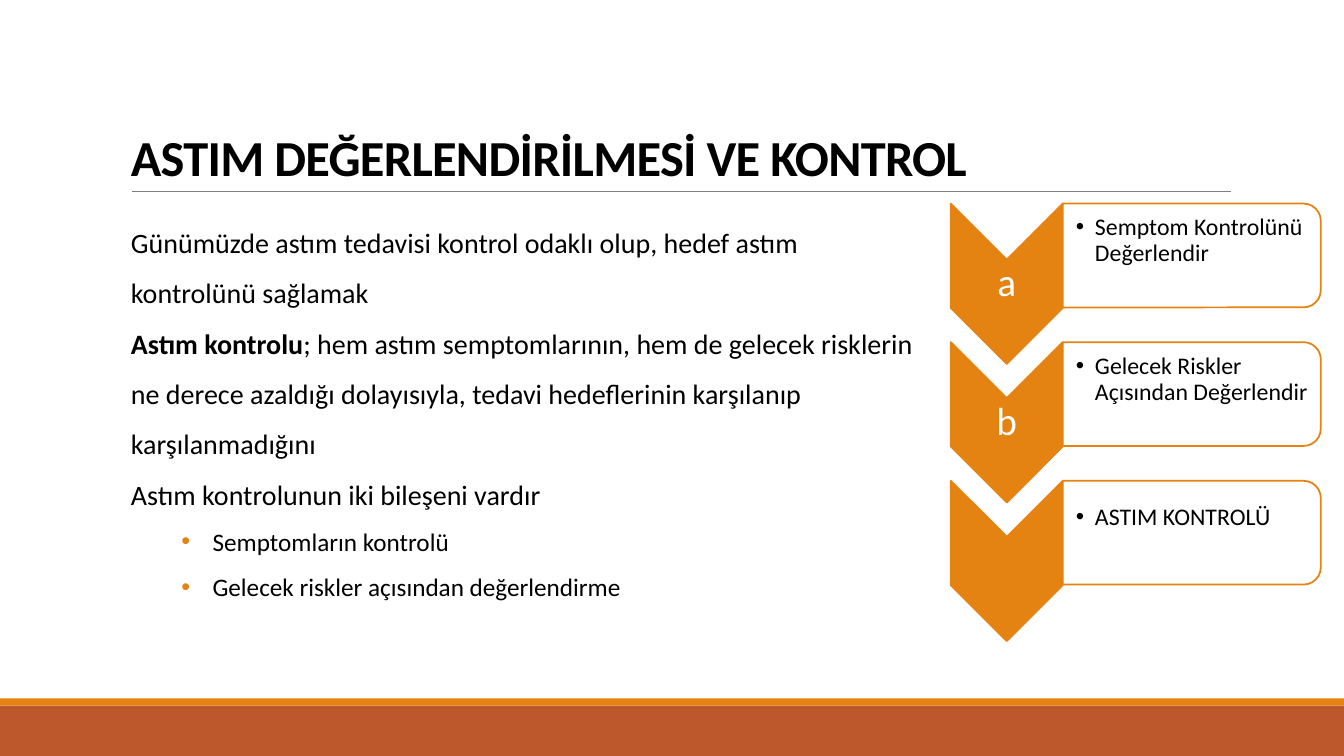
import pptx
import pptx.dml.color
import pptx.enum.shapes
import pptx.enum.text
import pptx.oxml
import pptx.oxml.ns
import pptx.util
from lxml import etree

TITLE = "ASTIM DEĞERLENDİRİLMESİ VE KONTROL"
# Each paragraph is a level and its (text, bold) parts
BODY = [
    (0, [("Günümüzde astım tedavisi kontrol odaklı olup, hedef astım kontrolünü sağlamak", False)]),
    (0, [("Astım kontrolu", True),
         ("; hem astım semptomlarının, hem de gelecek risklerin ne derece azaldığı dolayısıyla, "
          "tedavi hedeflerinin karşılanıp karşılanmadığını", False)]),
    (0, [("Astım kontrolunun iki bileşeni vardır", False)]),
    (1, [("Semptomların kontrolü", False)]),
    (1, [("Gelecek riskler açısından değerlendirme", False)]),
]
STEPS = [
    ("a", "Semptom Kontrolünü Değerlendir"),
    ("b", "Gelecek Riskler Açısından Değerlendir"),
    ("", "ASTIM KONTROLÜ"),
]
COLORS = {"orange": "E48312", "rust": "BD582C", "rule": "808080",
          "text": "000000", "paper": "FFFFFF"}
FONT = "Calibri"
BODY_SIZES = (20, 18)

WIDTH, HEIGHT = 13.33, 7.5
MARGIN = 1.2
FOOTER_TOP, STRIPE = 7.0, 0.07
STEP_LEFT, STEP_TOP, STEP_PITCH = 9.43, 2.02, 1.375
CHEVRON_W, CHEVRON_H = 1.11, 1.59
CARD_W, CARD_H = 2.56, 1.03

inch = pptx.util.Inches
SHAPE = pptx.enum.shapes.MSO_SHAPE
ANCHOR = pptx.enum.text.MSO_ANCHOR
ALIGN = pptx.enum.text.PP_ALIGN
qn = pptx.oxml.ns.qn

deck = pptx.Presentation()
deck.slide_width, deck.slide_height = inch(WIDTH), inch(HEIGHT)
slide = deck.slides.add_slide(deck.slide_layouts[6])


def color(name):
    return pptx.dml.color.RGBColor.from_string(COLORS[name])


def add_block(kind, left, top, width, height, fill, line=None):
    block = slide.shapes.add_shape(kind, inch(left), inch(top), inch(width), inch(height))
    block.shadow.inherit = False
    block.fill.solid()
    block.fill.fore_color.rgb = color(fill)
    if line:
        block.line.color.rgb = color(line)
        block.line.width = pptx.util.Pt(1.25)
    else:
        block.line.fill.background()
    return block


def add_turned(kind, left, top, width, height, fill):
    """Add a shape turned a quarter clockwise that covers the given area."""
    block = add_block(kind, left + (width - height) / 2, top + (height - width) / 2,
                      height, width, fill, "orange")
    block.rotation = 90
    return block


def add_text(left, top, width, height, anchor, insets=(0.1, 0.05, 0.1, 0.05)):
    box = slide.shapes.add_textbox(inch(left), inch(top), inch(width), inch(height))
    frame = box.text_frame
    frame.word_wrap = True
    frame.vertical_anchor = anchor
    for side, inset in zip(("left", "top", "right", "bottom"), insets):
        setattr(frame, f"margin_{side}", inch(inset))
    return frame


def add_run(paragraph, text, size, fill="text", bold=False):
    run = paragraph.add_run()
    run.text = text
    for name, value in {"name": FONT, "size": pptx.util.Pt(size), "bold": bold}.items():
        setattr(run.font, name, value)
    run.font.color.rgb = color(fill)
    return run


def set_bullet(paragraph, indent, hang, fill):
    props = paragraph._p.get_or_add_pPr()
    props.set("marL", str(inch(indent)))
    props.set("indent", str(-inch(hang)))
    tint = etree.SubElement(props, qn("a:buClr"))
    etree.SubElement(tint, qn("a:srgbClr"), val=COLORS[fill])
    etree.SubElement(props, qn("a:buFont"), typeface="Arial")
    etree.SubElement(props, qn("a:buChar"), char="•")


def add_frame():
    add_block(SHAPE.RECTANGLE, 0, FOOTER_TOP, WIDTH, HEIGHT - FOOTER_TOP, "rust")
    add_block(SHAPE.RECTANGLE, 0, FOOTER_TOP - STRIPE, WIDTH, STRIPE, "orange")
    rule = slide.shapes.add_connector(pptx.enum.shapes.MSO_CONNECTOR.STRAIGHT,
                                      inch(1.31), inch(1.9), inch(12.21), inch(1.9))
    rule.line.color.rgb = color("rule")
    rule.line.width = pptx.util.Pt(0.5)
    etree.SubElement(rule._element.spPr, qn("a:effectLst"))
    heading = add_text(MARGIN, 0.31, 11, 1.59, ANCHOR.BOTTOM).paragraphs[0]
    heading.line_spacing = 0.85
    run = add_run(heading, TITLE, 36, bold=True)
    run.font._element.set("spc", "-50")


def add_body():
    frame = add_text(MARGIN, 2.02, 8.11, 4.38, ANCHOR.TOP)
    for index, (level, parts) in enumerate(BODY):
        paragraph = frame.add_paragraph() if index else frame.paragraphs[0]
        paragraph.level = level
        paragraph.line_spacing = 1.5
        if level:
            set_bullet(paragraph, 0.81, 0.31, "orange")
        for text, bold in parts:
            add_run(paragraph, text, BODY_SIZES[level], bold=bold)


def add_step(top, letter, task):
    add_turned(SHAPE.CHEVRON, STEP_LEFT, top, CHEVRON_W, CHEVRON_H, "orange")
    if letter:
        label = add_text(STEP_LEFT, top + CHEVRON_W / 2, CHEVRON_W, CHEVRON_H - CHEVRON_W,
                         ANCHOR.MIDDLE, (0.02,) * 4).paragraphs[0]
        label.alignment = ALIGN.CENTER
        label.line_spacing = 0.9
        add_run(label, letter, 28, "paper")
    card_left = STEP_LEFT + CHEVRON_W
    card = add_turned(SHAPE.ROUND_2_SAME_RECTANGLE, card_left, top, CARD_W, CARD_H, "paper")
    tint = card._element.spPr.find(qn("a:solidFill"))[0]
    etree.SubElement(tint, qn("a:alpha"), val="90000")
    note = add_text(card_left, top + 0.05, CARD_W - 0.05, CARD_H - 0.1,
                    ANCHOR.MIDDLE, (0.13, 0.01, 0.01, 0.3)).paragraphs[0]
    note.line_spacing = 0.9
    set_bullet(note, 0.19, 0.19, "text")
    add_run(note, task, 17)


add_frame()
for row, (letter, task) in enumerate(STEPS):
    add_step(STEP_TOP + row * STEP_PITCH, letter, task)
add_body()
deck.save("out.pptx")
